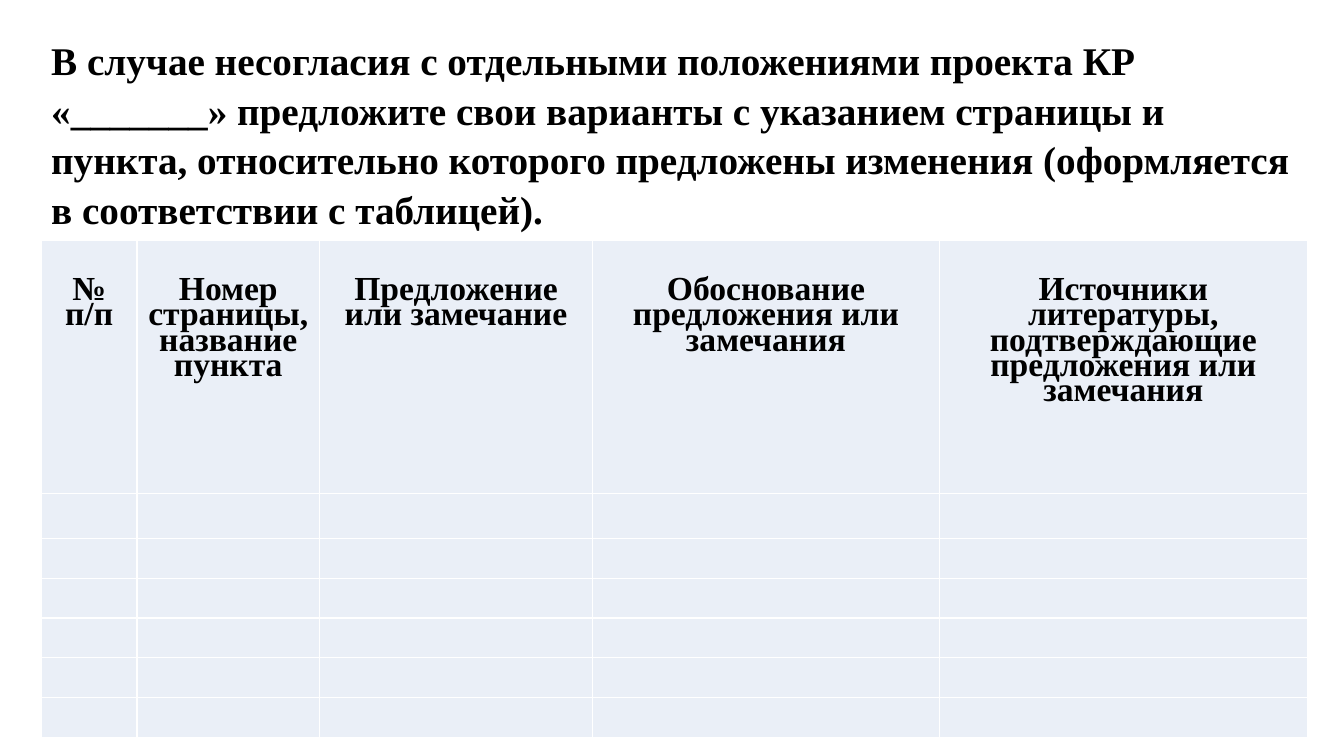
import pptx
import pptx.util
import pptx.dml.color
import pptx.enum.text
import pptx.oxml
import pptx.oxml.ns

Pt = pptx.util.Pt
RGB = pptx.dml.color.RGBColor.from_string
CENTER = pptx.enum.text.PP_ALIGN.CENTER

THEME = {
    "font": "Times New Roman",
    "text": "000000",
    "cell": "EAEFF7",
    "border": "FFFFFF",
    "title_size": 28,
    "header_size": 24,
}
LEFT, WIDTH = 29.5, 904.3
COLUMN_WIDTHS = [68.4, 130.3, 195.1, 247.7, 262.8]
ROW_HEIGHTS = [180.5, 32] + [28.5] * 5
HEADERS = [
    "№ п/п",
    "Номер страницы, название пункта",
    "Предложение или замечание",
    "Обоснование предложения или замечания",
    "Источники литературы, подтверждающие предложения или замечания",
]
TITLE = (
    "В случае несогласия с отдельными положениями проекта КР «_______» "
    "предложите свои варианты с указанием страницы и пункта, относительно "
    "которого предложены изменения (оформляется в соответствии с таблицей)."
)


def write_bold(paragraph, text, size, formats):
    for name, value in formats.items():
        setattr(paragraph, name, value)
    run = paragraph.add_run()
    run.text = text
    for name, value in {"name": THEME["font"], "size": Pt(size), "bold": True}.items():
        setattr(run.font, name, value)
    run.font.color.rgb = RGB(THEME["text"])


def add_borders(cell):
    properties = cell._tc.get_or_add_tcPr()
    for position, side in enumerate(("lnL", "lnR", "lnT", "lnB")):
        line = pptx.oxml.parse_xml(
            f'<a:{side} {pptx.oxml.ns.nsdecls("a")} w="{Pt(1)}"><a:solidFill>'
            f'<a:srgbClr val="{THEME["border"]}"/></a:solidFill></a:{side}>'
        )
        properties.insert(position, line)


presentation = pptx.Presentation()
presentation.slide_width = Pt(960)
presentation.slide_height = Pt(540)
slide = presentation.slides.add_slide(presentation.slide_layouts[6])

table = slide.shapes.add_table(
    len(ROW_HEIGHTS), len(COLUMN_WIDTHS),
    Pt(LEFT), Pt(172), Pt(WIDTH), Pt(sum(ROW_HEIGHTS)),
).table
table.first_row = False
table.horz_banding = False
for column, width in zip(table.columns, COLUMN_WIDTHS):
    column.width = Pt(width)
for row, height in zip(table.rows, ROW_HEIGHTS):
    row.height = Pt(height)

cell_margins = {
    "margin_left": Pt(5), "margin_right": Pt(5),
    "margin_top": 0, "margin_bottom": 0,
}
for cell in table.iter_cells():
    for name, value in cell_margins.items():
        setattr(cell, name, value)
    cell.fill.solid()
    cell.fill.fore_color.rgb = RGB(THEME["cell"])
    add_borders(cell)

header_format = {"alignment": CENTER, "line_spacing": Pt(18), "space_after": Pt(12)}
for cell, header in zip(table.rows[0].cells, HEADERS):
    cell.margin_top = Pt(30)
    write_bold(cell.text_frame.paragraphs[0], header, THEME["header_size"], header_format)

title = slide.shapes.add_textbox(Pt(LEFT), Pt(21), Pt(WIDTH), Pt(143.3))
title.text_frame.word_wrap = True
title.text_frame.auto_size = pptx.enum.text.MSO_AUTO_SIZE.SHAPE_TO_FIT_TEXT
write_bold(title.text_frame.paragraphs[0], TITLE, THEME["title_size"], {"line_spacing": 1.05})

presentation.save("out.pptx")
